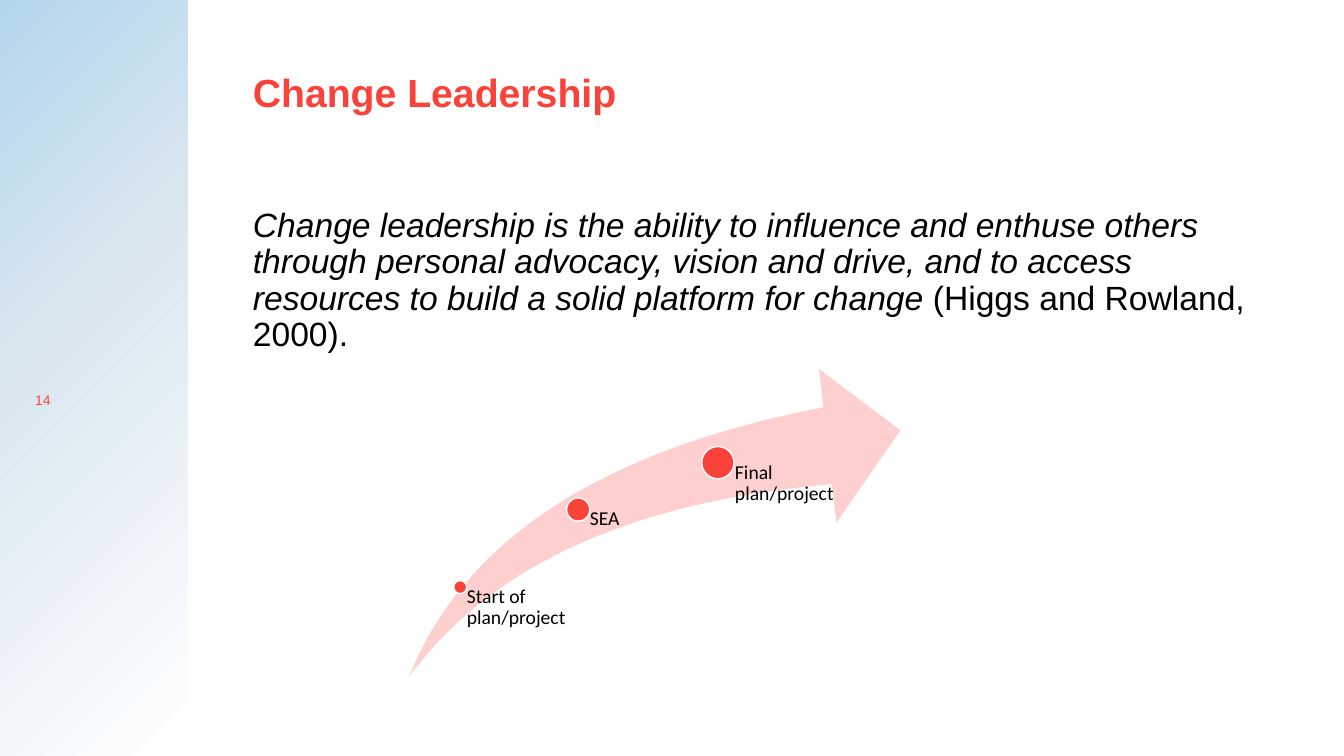
"""Build the Change Leadership slide."""
from lxml.etree import SubElement
from pptx import Presentation
from pptx.dml.color import RGBColor
from pptx.enum.shapes import MSO_SHAPE
from pptx.enum.text import MSO_ANCHOR
from pptx.oxml.ns import qn
from pptx.util import Pt

PX = 9144
RED = "F9423A"
STEPS = [
    ("Start of plan/project", 456, 582, 13, 114),
    ("SEA", 573, 505, 23, 117),
    ("Final plan/project", 712, 459, 32, 117),
]
BASE = 671


def color(code):
    return RGBColor.from_string(code)


def style(item, form):
    for name, value in form.items():
        setattr(item, name, value)


def shape(slide, kind, box, fill=None, edge=None):
    item = slide.shapes.add_shape(kind, *[n * PX for n in box])
    item.shadow.inherit = False
    if fill:
        item.fill.solid()
        item.fill.fore_color.rgb = color(fill)
    if edge:
        item.line.color.rgb = color(edge)
        item.line.width = Pt(1)
    else:
        item.line.fill.background()
    return item


def text(slide, box, runs, size, code="000000", face="Arial", gap=0.9, **frame):
    item = slide.shapes.add_textbox(*[n * PX for n in box])
    body = item.text_frame
    style(body, {"word_wrap": True, **frame})
    para = body.paragraphs[0]
    para.line_spacing = gap
    for words, form in runs:
        run = para.add_run()
        run.text = words
        style(run.font, {"name": face, "size": Pt(size), **form})
        run.font.color.rgb = color(code)


def fade(item, stops):
    """Fill a shape with a round gradient that starts at its top left corner."""
    item.fill.gradient()
    grad = item.fill._xPr.find(qn("a:gradFill"))
    for child in list(grad):
        grad.remove(child)
    row = SubElement(grad, qn("a:gsLst"))
    for spot, code in stops:
        stop = SubElement(row, qn("a:gs"), pos=str(spot * 1000))
        SubElement(stop, qn("a:srgbClr"), val=code)
    way = SubElement(grad, qn("a:path"), path="circle")
    SubElement(way, qn("a:fillToRect"), r="100000", b="100000")


def step(slide, words, x, y, size, width):
    """Draw a dot centred on x, y and the label that hangs from its centre."""
    half = size // 2
    shape(slide, MSO_SHAPE.OVAL, (x - half, y - half, size, size), RED, "FFFFFF")
    text(slide, (x, y, width, BASE - y), [(words, {})], 14, face="Calibri",
         margin_left=(half + 1) * PX, margin_top=0, margin_right=0,
         margin_bottom=0)


def main():
    deck = Presentation()
    style(deck, {"slide_width": 1333 * PX, "slide_height": 750 * PX})
    slide = deck.slides.add_slide(deck.slide_layouts[6])

    band = shape(slide, MSO_SHAPE.RECTANGLE, (0, 0, 186, 750))
    fade(band, [(0, "B3D6EC"), (39, "D8E6F0"), (100, "FFFFFF")])
    text(slide, (25, 379, 154, 35), [("14", {})], 10, "FF4337", gap=1.0,
         vertical_anchor=MSO_ANCHOR.MIDDLE)

    text(slide, (241, 68, 1012, 126), [("Change Leadership", {"bold": True})],
         28, RED)
    quote = ("Change leadership is the ability to influence and enthuse others "
             "through personal advocacy, vision and drive, and to access "
             "resources to build a solid platform for change")
    text(slide, (241, 202, 1012, 476),
         [(quote, {"italic": True}), (" (Higgs and Rowland, 2000).", {})], 24)

    arrow = shape(slide, MSO_SHAPE.SWOOSH_ARROW, (406, 366, 487, 305), "FDCFCE")
    for k in range(2):
        arrow.adjustments[k] = 0.25
    for item in STEPS:
        step(slide, *item)

    deck.save("out.pptx")


if __name__ == "__main__":
    main()
